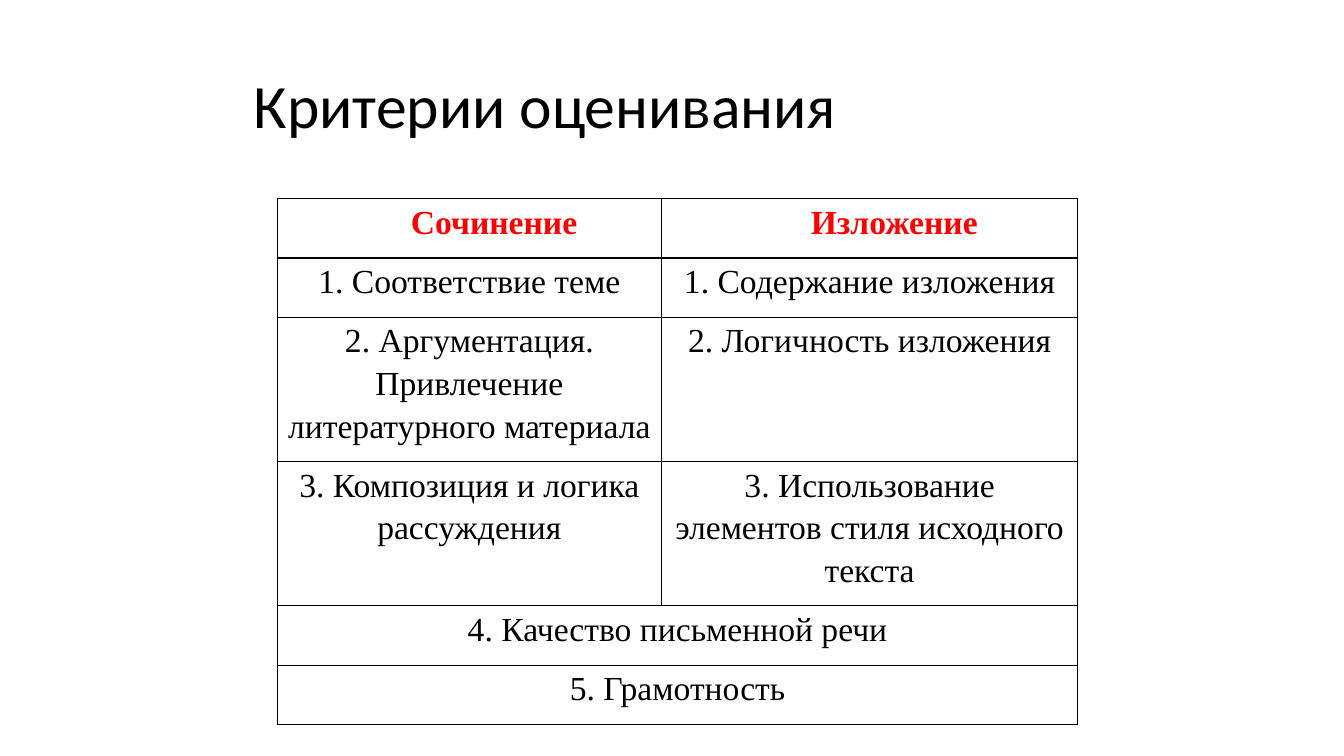
from lxml import etree
from pptx import Presentation
from pptx.dml.color import RGBColor
from pptx.enum import text
from pptx.oxml import ns
from pptx.util import Inches, Pt

# Content: a row with one entry spans both columns
TITLE = "Критерии оценивания"
HEADER = ("Сочинение", "Изложение")
CRITERIA = [
    ("1. Соответствие теме", "1. Содержание изложения"),
    ("2. Аргументация. Привлечение литературного материала",
     "2. Логичность изложения"),
    ("3. Композиция и логика рассуждения",
     "3. Использование элементов стиля исходного текста"),
    ("4. Качество письменной речи",),
    ("5. Грамотность",),
]
COL_WIDTHS = (3.81, 4.13)
SHORT_ROW, TALL_ROW = 0.59, 1.43
ROW_HEIGHTS = (SHORT_ROW, SHORT_ROW, TALL_ROW, TALL_ROW, SHORT_ROW, SHORT_ROW)

THEME = {
    "title_font": "Calibri", "title_size": 44,
    "table_font": "Times New Roman", "table_size": 24,
    "ink": "000000", "accent": "FF0000", "border_width": 1,
}


def style_run(r, font, size, color, bold=False):
    r.font.name = font
    r.font.size = Pt(size)
    r.font.bold = bold
    r.font.color.rgb = RGBColor.from_string(color)


def add_borders(cell):
    tc_pr = cell._tc.get_or_add_tcPr()
    for i, side in enumerate(("lnL", "lnR", "lnT", "lnB")):
        ln = etree.Element(ns.qn(f"a:{side}"), w=str(Pt(THEME["border_width"])))
        fill = etree.SubElement(ln, ns.qn("a:solidFill"))
        etree.SubElement(fill, ns.qn("a:srgbClr"), val=THEME["ink"])
        tc_pr.insert(i, ln)


def fill_cell(cell, words, is_header):
    cell.text_frame.text = words
    p = cell.text_frame.paragraphs[0]
    p.alignment = text.PP_ALIGN.CENTER
    p.line_spacing = 1.15
    p.space_after = Pt(10)
    if is_header:
        p._p.get_or_add_pPr().set("indent", str(Inches(0.49)))
    color = THEME["accent"] if is_header else THEME["ink"]
    style_run(p.runs[0], THEME["table_font"], THEME["table_size"], color, is_header)


def add_title(slide):
    sp = slide.shapes.add_textbox(Inches(2.42), Inches(0.53), Inches(8.5), Inches(1.09))
    tf = sp.text_frame
    tf.word_wrap = True
    tf.vertical_anchor = text.MSO_ANCHOR.MIDDLE
    tf.text = TITLE
    p = tf.paragraphs[0]
    p.line_spacing = 0.9
    style_run(p.runs[0], THEME["title_font"], THEME["title_size"], THEME["ink"])


def add_criteria_table(slide):
    rows = [HEADER] + CRITERIA
    table = slide.shapes.add_table(
        len(rows), len(COL_WIDTHS), Inches(2.75), Inches(1.97),
        Inches(sum(COL_WIDTHS)), Inches(sum(ROW_HEIGHTS))).table
    table.first_row = table.horz_banding = False
    for col, width in zip(table.columns, COL_WIDTHS):
        col.width = Inches(width)
    for row, height in zip(table.rows, ROW_HEIGHTS):
        row.height = Inches(height)

    # Plain cells with thin borders
    for cell in table.iter_cells():
        cell.fill.background()
        cell.margin_left = cell.margin_right = Inches(0.07)
        cell.margin_top = cell.margin_bottom = 0
        add_borders(cell)

    # Wording
    for i, entries in enumerate(rows):
        if len(entries) == 1:
            table.cell(i, 0).merge(table.cell(i, len(COL_WIDTHS) - 1))
        for j, words in enumerate(entries):
            fill_cell(table.cell(i, j), words, is_header=i == 0)


def main():
    prs = Presentation()
    prs.slide_width, prs.slide_height = Inches(13.33), Inches(7.5)
    slide = prs.slides.add_slide(prs.slide_layouts[6])
    add_title(slide)
    add_criteria_table(slide)
    prs.save("out.pptx")


if __name__ == "__main__":
    main()
